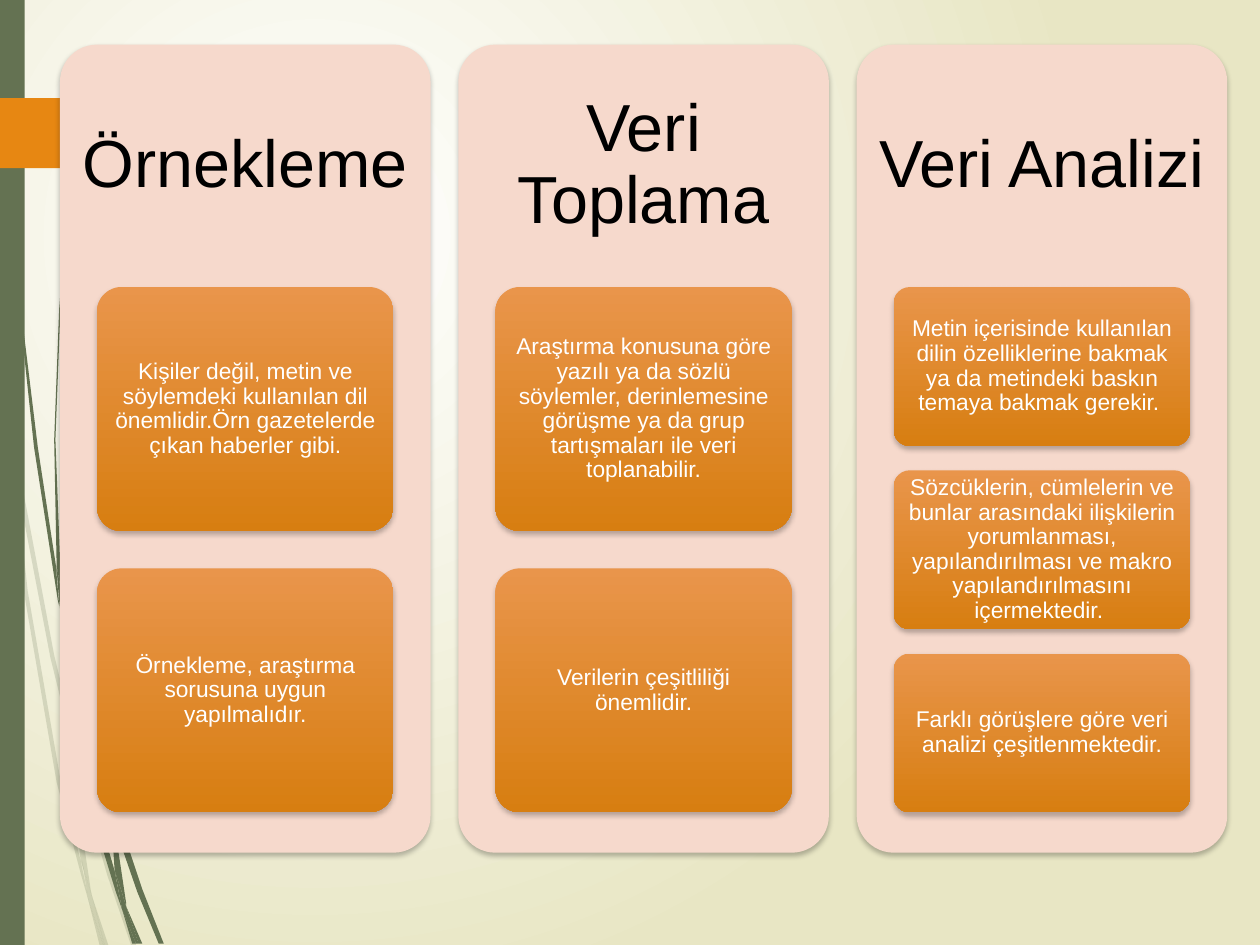
from dataclasses import dataclass

from lxml import etree
from pptx import Presentation
from pptx import util as u
from pptx.dml.color import RGBColor
from pptx.enum import shapes, text
from pptx.oxml.ns import qn

COLORS = {
    "white": "FFFFFF", "cream": "E8E6C4", "moss": "647252", "orange": "E78712",
    "panel": "F6D9CC", "tile_top": "E9954B", "tile_bottom": "D77E11", "black": "000000",
}
PANEL_LEFT, PANEL_TOP, PANEL_WIDTH, PANEL_HEIGHT = 1.21, 0.9, 7.47, 16.29
PANEL_STEP = 8.03
HEADING_HEIGHT = 0.3 * PANEL_HEIGHT
TILES_HEIGHT = 0.65 * PANEL_HEIGHT
TILE_WIDTH = 0.8 * PANEL_WIDTH
GAP_RATIO = 2 / 13
HUNDREDTH_INCH = u.Cm(2.54) / 100


@dataclass
class Column:
    heading: str
    tiles: list[str]


@dataclass
class Area:
    left: float
    top: float
    width: float
    height: float

    def lengths(self) -> list[u.Length]:
        return [u.Cm(value) for value in (self.left, self.top, self.width, self.height)]


@dataclass
class Style:
    size: float
    color: str
    inset_x: float
    inset_y: float


HEADING = Style(38, "black", 0.41, 0.41)
BODY = Style(13, "white", 0.1, 0.08)

COLUMNS = [
    Column("Örnekleme", [
        "Kişiler değil, metin ve söylemdeki kullanılan dil önemlidir.Örn gazetelerde çıkan haberler gibi.",
        "Örnekleme, araştırma sorusuna uygun yapılmalıdır.",
    ]),
    Column("Veri Toplama", [
        "Araştırma konusuna göre yazılı ya da sözlü söylemler, derinlemesine görüşme ya da grup "
        "tartışmaları ile veri toplanabilir.",
        "Verilerin çeşitliliği önemlidir.",
    ]),
    Column("Veri Analizi", [
        "Metin içerisinde kullanılan dilin özelliklerine bakmak ya da metindeki baskın temaya bakmak gerekir. ",
        "Sözcüklerin, cümlelerin ve bunlar arasındaki ilişkilerin yorumlanması, yapılandırılması ve makro "
        "yapılandırılmasını içermektedir. ",
        "Farklı görüşlere göre veri analizi çeşitlenmektedir.",
    ]),
]

PALE_WISPS = [
    [(8, 350), (6, 322), (0, 282), (0, 299), (7, 344)],
    [(40, 522), (59, 599), (59, 586), (43, 520), (10, 345), (12, 376)],
    [(64, 607), (61, 596), (61, 610), (85, 694), (104, 750), (108, 750), (88, 692)],
    [(83, 750), (86, 750), (73, 711)],
    [(64, 683), (48, 619), (22, 469), (12, 376), (8, 350), (19, 470), (45, 621), (64, 693),
     (70, 714), (69, 707)],
    [(58, 599), (60, 646), (64, 683), (67, 692), (73, 711), (72, 706), (63, 646), (61, 610), (61, 608)],
    [(70, 714), (79, 750), (82, 750)],
    [(67, 692), (65, 683), (69, 707), (70, 714), (82, 750), (83, 750), (73, 711)],
]
DARK_WISPS = [
    [(5, 110), (14, 233), (27, 355), (46, 477), (47, 481), (45, 457), (45, 453), (30, 355),
     (15, 232), (6, 109), (4, 48), (3, 0), (2, 0), (3, 48)],
    [(94, 649), (91, 641), (91, 656), (109, 708), (126, 749), (130, 749), (113, 706)],
    [(91, 691), (81, 657), (60, 556), (53, 505), (47, 477), (56, 557), (77, 659), (92, 708),
     (97, 722), (96, 717)],
    [(50, 472), (48, 453), (44, 349), (48, 245), (52, 193), (58, 141), (51, 193), (47, 245),
     (43, 349), (45, 449), (49, 472)],
    [(110, 749), (113, 749), (100, 719)],
    [(47, 477), (53, 505), (50, 472), (49, 472), (45, 449), (45, 453)],
    [(97, 722), (105, 749), (108, 749)],
    [(88, 645), (91, 691), (96, 706), (100, 719), (100, 716), (91, 656), (90, 651)],
    [(96, 706), (91, 691), (96, 717), (97, 722), (108, 749), (110, 749), (100, 719)],
]


def rgb(name: str) -> RGBColor:
    return RGBColor.from_string(COLORS[name])


def fill_plain(shape, color: str) -> None:
    shape.fill.solid()
    shape.fill.fore_color.rgb = rgb(color)
    shape.line.fill.background()
    shape.shadow.inherit = False


def fill_gradient(fill, first: str, last: str) -> None:
    fill.gradient()
    for stop, color in zip(fill.gradient_stops, (first, last)):
        stop.color.rgb = rgb(color)


def add_alpha(parent, percent: int) -> None:
    etree.SubElement(parent, qn("a:alpha"), val=str(percent * 1000))


def add_soft_shadow(shape) -> None:
    effects = shape._element.spPr.find(qn("a:effectLst"))
    shadow = etree.SubElement(effects, qn("a:outerShdw"), blurRad=str(u.Pt(3)),
                              dist=str(u.Pt(2)), dir="5400000", rotWithShape="0")
    add_alpha(etree.SubElement(shadow, qn("a:srgbClr"), val=COLORS["black"]), 25)


def paint_background(page) -> None:
    fill_gradient(page.background.fill, "white", "cream")
    gradient = page._element.find(".//" + qn("a:gradFill"))
    gradient.remove(gradient.find(qn("a:lin")))
    circle = etree.SubElement(gradient, qn("a:path"), path="circle")
    etree.SubElement(circle, qn("a:fillToRect"), l="50000", t="50000", r="100000", b="100000")


def add_wisp(page, points: list[tuple[int, int]], opacity: int) -> None:
    builder = page.shapes.build_freeform(*points[0], scale=HUNDREDTH_INCH)
    builder.add_line_segments(points[1:], close=True)
    wisp = builder.convert_to_shape()
    fill_plain(wisp, "moss")
    if opacity < 100:
        add_alpha(wisp._element.spPr.find(".//" + qn("a:srgbClr")), opacity)


def add_block(page, kind, area: Area, color: str):
    block = page.shapes.add_shape(kind, *area.lengths())
    fill_plain(block, color)
    return block


def add_rounded(page, area: Area, color: str):
    block = add_block(page, shapes.MSO_SHAPE.ROUNDED_RECTANGLE, area, color)
    block.adjustments[0] = 0.1
    add_soft_shadow(block)
    return block


def write(box, words: str, style: Style) -> None:
    frame = box.text_frame
    para = frame.paragraphs[0]
    span = para.add_run()
    span.text = words
    span.font.color.rgb = rgb(style.color)
    formats = {
        frame: {
            "word_wrap": True, "vertical_anchor": text.MSO_ANCHOR.MIDDLE,
            "margin_left": u.Cm(style.inset_x), "margin_right": u.Cm(style.inset_x),
            "margin_top": u.Cm(style.inset_y), "margin_bottom": u.Cm(style.inset_y),
        },
        para: {"alignment": text.PP_ALIGN.CENTER, "line_spacing": 0.9},
        span.font: {"name": "Arial", "size": u.Pt(style.size)},
    }
    for target, values in formats.items():
        for name, value in values.items():
            setattr(target, name, value)


def add_column(page, column: Column, left: float) -> None:
    add_rounded(page, Area(left, PANEL_TOP, PANEL_WIDTH, PANEL_HEIGHT), "panel")
    heading = Area(left, PANEL_TOP, PANEL_WIDTH, HEADING_HEIGHT)
    write(page.shapes.add_textbox(*heading.lengths()), column.heading, HEADING)
    count = len(column.tiles)
    height = TILES_HEIGHT / (count + (count - 1) * GAP_RATIO)
    for row, words in enumerate(column.tiles):
        top = PANEL_TOP + HEADING_HEIGHT + row * height * (1 + GAP_RATIO)
        area = Area(left + (PANEL_WIDTH - TILE_WIDTH) / 2, top, TILE_WIDTH, height)
        tile = add_rounded(page, area, "tile_top")
        fill_gradient(tile.fill, "tile_top", "tile_bottom")
        tile.fill.gradient_angle = 270
        write(tile, words, BODY)


def main() -> None:
    deck = Presentation()
    deck.slide_width, deck.slide_height = u.Cm(25.4), u.Cm(19.05)
    page = deck.slides.add_slide(deck.slide_layouts[6])
    paint_background(page)
    for wisps, opacity in ((PALE_WISPS, 20), (DARK_WISPS, 100)):
        for points in wisps:
            add_wisp(page, points, opacity)
    add_block(page, shapes.MSO_SHAPE.RECTANGLE, Area(0, 0, 0.5, 19.05), "moss")
    add_block(page, shapes.MSO_SHAPE.PENTAGON, Area(0, 1.98, 3.79, 1.41), "orange")
    for index, column in enumerate(COLUMNS):
        add_column(page, column, PANEL_LEFT + index * PANEL_STEP)
    deck.save("out.pptx")


if __name__ == "__main__":
    main()
